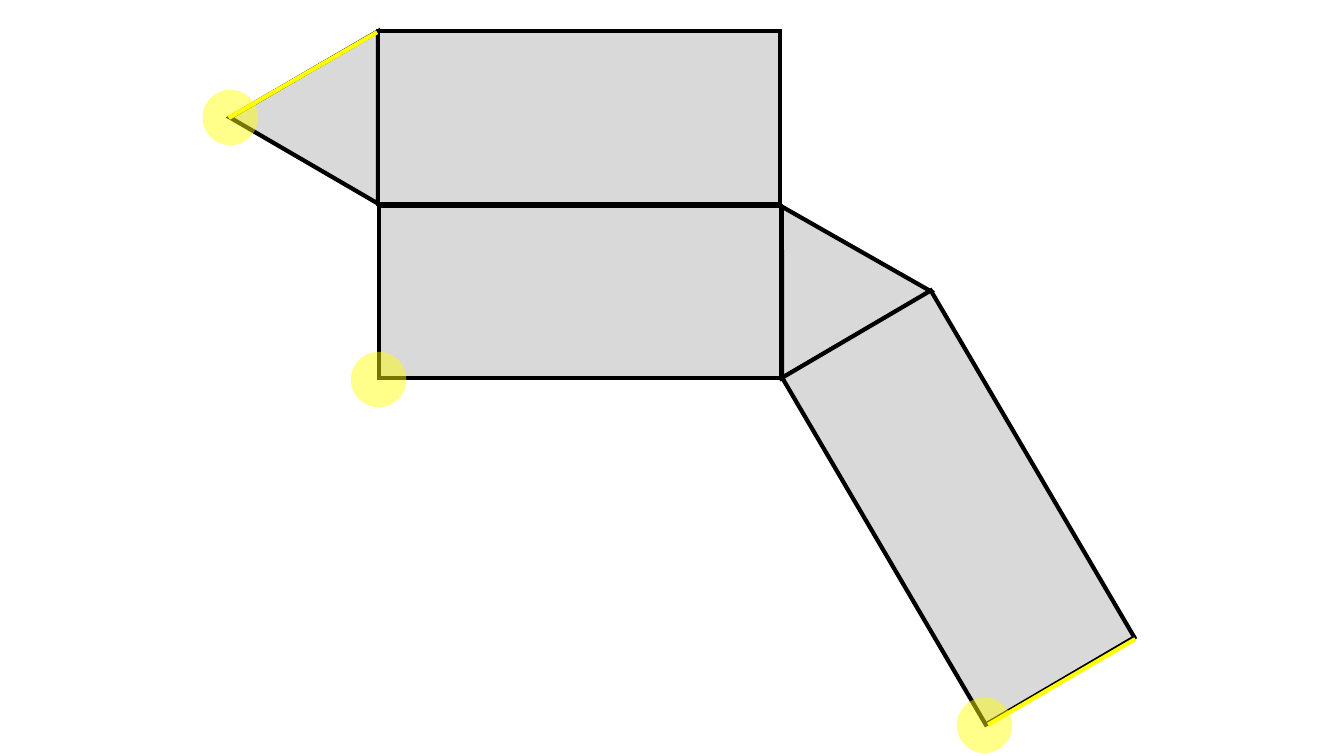
from lxml import etree
from pptx import Presentation
from pptx import util as u
from pptx.dml.color import RGBColor
from pptx.enum import shapes
from pptx.oxml.ns import qn

CELL = u.Inches(0.1)
EDGE, HEIGHT, LENGTH, SPOT = 17.1, 14.7, 39.9, 5.5


def colour(value):
    return RGBColor.from_string(value)


class NetSlide:
    """Draws a prism net on a grid of square cells, 133.3 columns by 75 rows."""

    face, edge, mark = "D9D9D9", "000000", "FFFF00"
    stroke, mark_alpha = 3, 46

    def __init__(self, deck):
        self.slide = deck.slides.add_slide(deck.slide_layouts[6])
        self.net = self.slide.shapes.add_group_shape()

    def outline(self, line, value):
        line.color.rgb = colour(value)
        line.width = u.Pt(self.stroke)

    def shape(self, parent, preset, centre, size, fill, turn=0):
        (column, row), (width, height) = centre, size
        box = (column - width / 2, row - height / 2, width, height)
        shape = parent.add_shape(preset, *(round(n * CELL) for n in box))
        shape.shadow.inherit = False
        shape.rotation = turn
        shape.fill.solid()
        shape.fill.fore_color.rgb = colour(fill)
        return shape

    def panel(self, preset, centre, height, turn):
        panel = self.shape(self.net.shapes, preset, centre, (EDGE, height), self.face, turn)
        self.outline(panel.line, self.edge)
        miter = etree.SubElement(panel._element.spPr.find(qn("a:ln")), qn("a:miter"))
        miter.set("lim", "800000")

    def spot(self, centre):
        oval = shapes.MSO_SHAPE.OVAL
        spot = self.shape(self.slide.shapes, oval, centre, (SPOT, SPOT), self.mark)
        spot.line.fill.background()
        tint = spot._element.spPr.find(qn("a:solidFill"))[0]
        etree.SubElement(tint, qn("a:alpha")).set("val", str(self.mark_alpha * 1000))

    def marked_edge(self, start, end):
        ends = (round(n * CELL) for n in (*start, *end))
        edge = self.slide.shapes.add_connector(shapes.MSO_CONNECTOR.STRAIGHT, *ends)
        self.outline(edge.line, self.mark)
        etree.SubElement(edge._element.spPr, qn("a:effectLst"))


def main():
    deck = Presentation()
    slide_size = {"slide_width": u.Inches(13.33), "slide_height": u.Inches(7.5)}
    for name, value in slide_size.items():
        setattr(deck, name, value)

    prism = NetSlide(deck)
    triangle, rectangle = shapes.MSO_SHAPE.ISOSCELES_TRIANGLE, shapes.MSO_SHAPE.RECTANGLE
    for centre, turn in (((81.25, 26.85), 329.8), ((30.15, 11.65), 270)):
        prism.panel(triangle, centre, HEIGHT, turn)
    for centre, turn in (((57.45, 11.65), 270), ((95.05, 50.35), 329.6), ((57.55, 28.95), 270)):
        prism.panel(rectangle, centre, LENGTH, turn)
    for centre in ((22.85, 11.65), (37.55, 37.65), (97.65, 71.95)):
        prism.spot(centre)
    for start, end in (((37.4, 3.2), (22.7, 11.7)), ((98, 71.9), (112.6, 63.4))):
        prism.marked_edge(start, end)
    deck.save("out.pptx")


if __name__ == "__main__":
    main()
